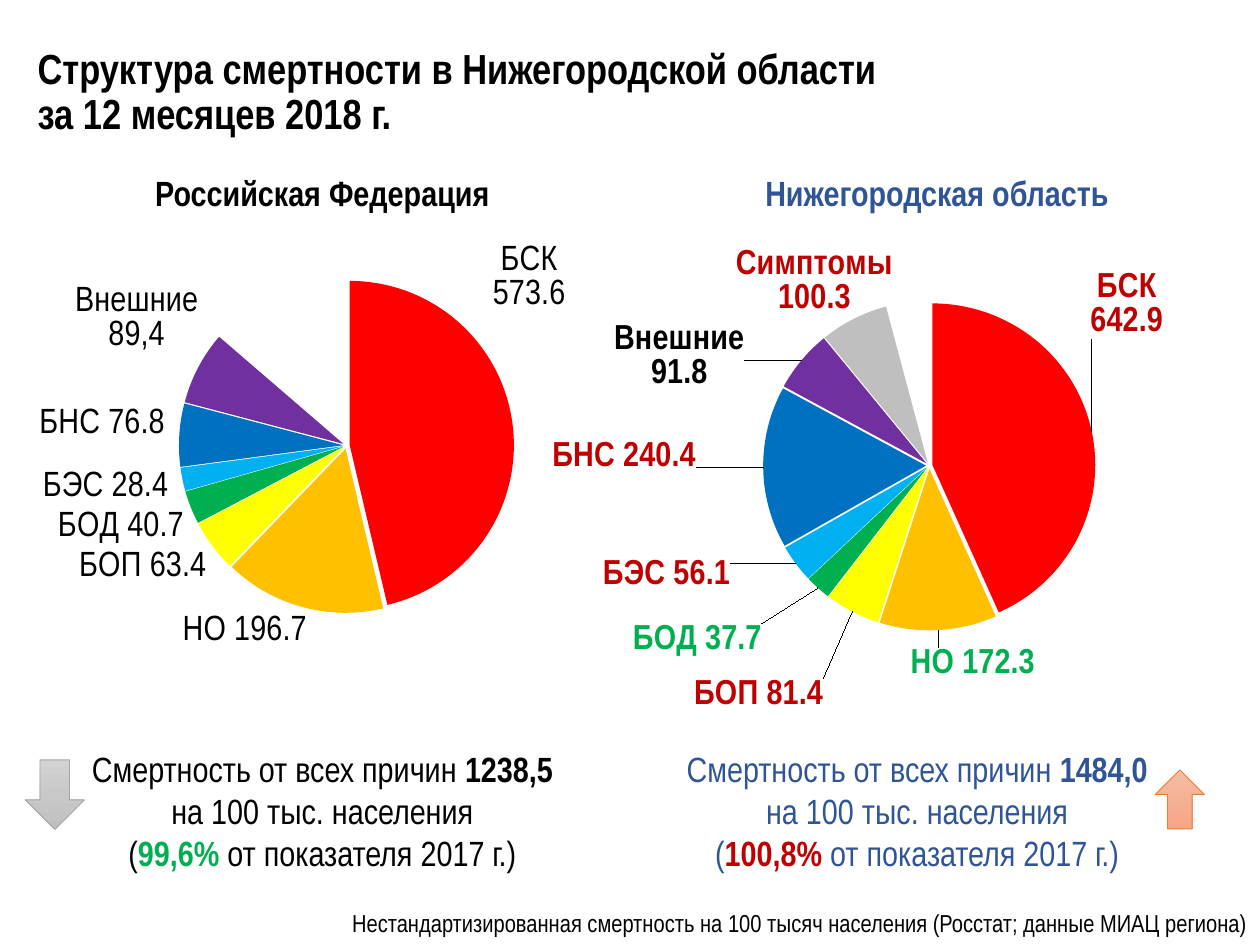
"""Build a slide comparing the structure of mortality in Russia and in the Nizhny Novgorod region."""
import copy

import lxml.etree
import pptx
import pptx.chart.data
import pptx.dml.color
import pptx.enum.chart
import pptx.enum.shapes
import pptx.enum.text
import pptx.oxml
import pptx.oxml.ns
import pptx.util

Cm, Pt = pptx.util.Cm, pptx.util.Pt
RGB = pptx.dml.color.RGBColor.from_string
qn = pptx.oxml.ns.qn
ALIGN = pptx.enum.text.PP_ALIGN
SHAPE = pptx.enum.shapes.MSO_SHAPE
FONT = "Arial Narrow"
C = {"black": "000000", "blue": "2F5597", "red": "C00000", "green": "00B050",
     "white": "FFFFFF", "silver": "BFBFBF"}
SLICES = ["FF0000", "FFC000", "FFFF00", "00B050", "00B0F0", "0070C0", "7030A0"]

prs = pptx.Presentation()
prs.slide_width, prs.slide_height = Cm(25.4), Cm(19.05)
s = prs.slides.add_slide(prs.slide_layouts[6])


def add_text(paragraphs, at, size=20, color="black", bold=False, align=ALIGN.CENTER, spacing=None):
    tf = s.shapes.add_textbox(*map(Cm, at)).text_frame
    tf.word_wrap = True
    for i, runs in enumerate(paragraphs):
        p = tf.paragraphs[0] if i == 0 else tf.add_paragraph()
        p.alignment, p.line_spacing = align, spacing
        for text, run_color, run_bold in runs:
            if text == "\n":
                p.add_line_break()
                continue
            r = p.add_run()
            r.text = text
            r.font.name, r.font.size = FONT, Pt(size)
            r.font.bold = bold or run_bold
            r.font.color.rgb = RGB(C[run_color or color])
    return tf


def chart_xml(tag, inner="", **attrs):
    attributes = "".join(f' {k}="{v}"' for k, v in attrs.items())
    return pptx.oxml.parse_xml(f'<c:{tag} {pptx.oxml.ns.nsdecls("c", "a")}{attributes}>{inner}</c:{tag}>')


tf = add_text([[("Структура смертности в Нижегородской области", None, True), ("\n", None, True),
                ("за 12 месяцев 2018 г.", None, True)]],
              (0.51, 0.76, 24.21, 3.18), size=24, align=ALIGN.LEFT, spacing=0.9)
tf.vertical_anchor = pptx.enum.text.MSO_ANCHOR.MIDDLE
tf.margin_bottom = Cm(1.05)

charts = [
    {"at": (0, 4.93, 13.79, 10.39), "plot": (0.154, 0.065, 0.705, 0.65), "bold": False,
     "colors": SLICES + [C["white"]], "leaders": 0,
     "points": [("БСК", 573.6, "black", "\n", (-0.04, -0.22)), ("НО", 196.7, "black", " ", (0.01, 0)),
                ("БОП", 63.4, "black", " ", None), ("БОД", 40.7, "black", " ", None),
                ("БЭС", 28.4, "black", " ", (-0.01, -0.02)), ("БНС", 76.8, "black", " ", (-0.01, -0.02)),
                ("Внешние", 89.4, "black", "\n", (0.01, -0.02)), ("Другое", 169.5, None, None, None)]},
    {"at": (7.7, 4.93, 17.2, 10.21), "plot": (0.44, 0.104, 0.403, 0.656), "bold": True,
     "colors": SLICES + [C["silver"], C["white"]], "leaders": 1,
     "points": [("БСК", 642.9, "red", " ", (-0.01, -0.18)), ("НО", 172.3, "green", " ", (0.04, 0.02)),
                ("БОП", 81.4, "red", " ", (-0.03, 0.12)), ("БОД", 37.7, "green", " ", (-0.06, 0.06)),
                ("БЭС", 56.1, "red", " ", (-0.07, -0.02)), ("БНС", 240.4, "red", " ", (-0.07, -0.02)),
                ("Внешние", 91.8, "black", "\n", (-0.06, 0.07)), ("Симптомы", 100.3, "red", "\n", (0.05, 0)),
                ("", 61.2, None, None, None)]},
]
for spec_ in charts:
    data = pptx.chart.data.CategoryChartData(number_format="0.0")
    data.categories = [point[0] for point in spec_["points"]]
    data.add_series("Series 1", [point[1] for point in spec_["points"]])
    ch = s.shapes.add_chart(pptx.enum.chart.XL_CHART_TYPE.PIE, *map(Cm, spec_["at"]), data).chart
    ch.has_legend = ch.has_title = False
    ch.font.name, ch.font.size, ch.font.color.rgb = "Calibri", Pt(18), RGB(C["black"])
    cs = ch._chartSpace
    cs.find(qn("c:chart")).addnext(chart_xml("spPr", "<a:noFill/><a:ln><a:noFill/></a:ln>"))
    area = cs.find(".//" + qn("c:plotArea"))
    for old in area.findall(qn("c:layout")):
        area.remove(old)
    x, y, w, h = spec_["plot"]
    area.insert(0, chart_xml("layout", '<c:manualLayout><c:layoutTarget val="inner"/><c:xMode val="edge"/>'
                             f'<c:yMode val="edge"/><c:x val="{x}"/><c:y val="{y}"/><c:w val="{w}"/>'
                             f'<c:h val="{h}"/></c:manualLayout>'))
    ch.plots[0].vary_by_categories = True
    ser = ch.plots[0].series[0]
    labels = ser.data_labels
    labels.show_value = labels.show_category_name = True
    labels.number_format, labels.number_format_is_linked = "0.0", False
    labels.position = pptx.enum.chart.XL_LABEL_POSITION.OUTSIDE_END
    labels.font.name, labels.font.size, labels.font.bold = FONT, Pt(20), spec_["bold"]
    labels.font.color.rgb = RGB(C["black"])
    for old in labels._element.findall(qn("c:showLeaderLines")):
        labels._element.remove(old)
    labels._element.append(chart_xml("separator", " "))
    labels._element.append(chart_xml("showLeaderLines", val=spec_["leaders"]))
    for i, (name, value, color, separator, offset) in enumerate(spec_["points"]):
        point = ser.points[i]
        point.format.fill.solid()
        point.format.fill.fore_color.rgb = RGB(spec_["colors"][i])
        point.format.line.fill.background()
        if color and not offset:
            continue
        label = point.data_label
        if value == 89.4:
            label.text_frame.text = "Внешние\n89,4"
            for p in label.text_frame.paragraphs:
                f = p.runs[0].font
                f.name, f.size, f.bold, f.color.rgb = FONT, Pt(20), False, RGB(C[color])
        else:
            f = label.font
            f.name, f.size, f.bold = FONT, Pt(20), spec_["bold"]
            f.color.rgb = RGB(C[color or "black"])
        label.position = pptx.enum.chart.XL_LABEL_POSITION.OUTSIDE_END
        el = labels._element.xpath(f'c:dLbl[c:idx/@val="{i}"]')[0]
        if not color:
            for child in list(el)[1:]:
                el.remove(child)
            el.append(chart_xml("delete", val=1))
            continue
        for old in el.findall(qn("c:layout")):
            el.remove(old)
        el.insert(1, chart_xml("layout", f'<c:manualLayout><c:x val="{offset[0]}"/>'
                               f'<c:y val="{offset[1]}"/></c:manualLayout>'))
        el.find(qn("c:showVal")).set("val", "1")
        el.find(qn("c:showCatName")).set("val", "1")
        el.append(chart_xml("separator", separator))
    ser._element.find(qn("c:dPt")).addprevious(chart_xml("explosion", val=2))
    for dpt in ser._element.findall(qn("c:dPt")):
        dpt.find(qn("c:spPr")).addprevious(chart_xml("explosion", val=2))

regions = [("Российская Федерация", 1.5, 1.5, "black", "1238,5", "99,6%", "green"),
           ("Нижегородская область", 13.89, 13.49, "blue", "1484,0", "100,8%", "red")]
for name, head_x, note_x, color, rate, change, change_color in regions:
    add_text([[(name, None, True)]], (head_x, 3.33, 10, 1.12), color=color)
    add_text([[("Смертность от всех причин ", None, False), (rate, None, True),
               (" на 100 тыс. населения", None, False)],
              [("(", None, False), (change, change_color, True), (" от показателя 2017 г.)", None, False)]],
             (note_x, 14.94, 10, 2.82), color=color)

add_text([[("Нестандартизированная смертность на 100 тысяч населения (Росстат; данные МИАЦ региона)", None, False)]],
         (2.69, 18.19, 22.71, 0.86), size=14, align=ALIGN.RIGHT)

arrows = [(SHAPE.DOWN_ARROW, (0.51, 15.32, 1.19, 1.4), ["D2D2D2", "C8C8C8", "C0C0C0"], "A5A5A5"),
          (SHAPE.UP_ARROW, (23.29, 15.52, 0.99, 1.19), ["F7BDA5", "F5B196", "F8A582"], "ED7D31")]
for kind, at, shades, outline in arrows:
    sp = s.shapes.add_shape(kind, *map(Cm, at))
    sp.shadow.inherit = False
    sp.fill.gradient()
    sp.fill.gradient_angle = 270
    stops = sp._element.spPr.find(".//" + qn("a:gsLst"))
    stops.insert(1, copy.deepcopy(stops[0]))
    for i, (stop, shade) in enumerate(zip(sp.fill.gradient_stops, shades)):
        stop.position, stop.color.rgb = i / 2, RGB(shade)
    sp.line.color.rgb, sp.line.width = RGB(outline), Pt(0.5)

prs.save("out.pptx")
